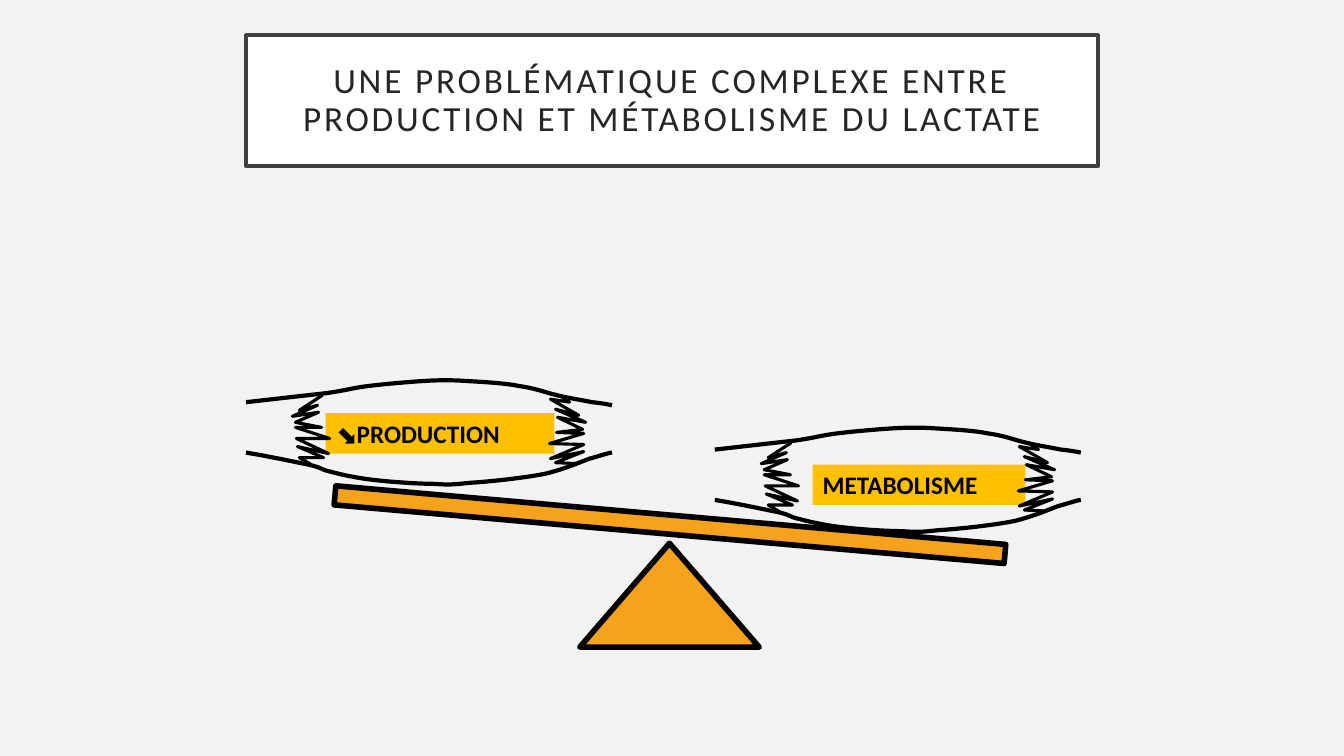
from pptx import Presentation
from pptx.dml.color import RGBColor
from pptx.enum import shapes, text
from pptx.oxml.ns import qn
from pptx.util import Inches, Pt
from lxml import etree

BLACK = RGBColor(0x00, 0x00, 0x00)
WHITE = RGBColor(0xFF, 0xFF, 0xFF)
PAPER = RGBColor(0xF2, 0xF2, 0xF2)
FRAME = RGBColor(0x40, 0x40, 0x40)
TITLE_INK = RGBColor(0x26, 0x26, 0x26)
ORANGE = RGBColor(0xF6, 0xA2, 0x1D)
YELLOW = RGBColor(0xFF, 0xC0, 0x00)

UPPER_WALL = [
    (2.44, 3.99), (2.71, 3.96), (2.97, 3.93), (3.24, 3.9),
    (3.45, 3.87), (3.49, 3.85), (3.65, 3.83),
    (3.81, 3.81), (4.04, 3.79), (4.2, 3.78),
    (4.37, 3.77), (4.47, 3.77), (4.63, 3.78),
    (4.79, 3.79), (5.01, 3.8), (5.15, 3.83),
    (5.3, 3.85), (5.4, 3.89), (5.52, 3.92),
    (5.64, 3.95), (5.78, 3.97), (5.87, 3.99),
    (5.97, 4), (6.02, 4.01), (6.07, 4.02)]
LOWER_WALL = [
    (2.44, 4.49), (2.68, 4.53), (2.91, 4.58), (3.06, 4.61),
    (3.2, 4.64), (3.18, 4.66), (3.28, 4.68),
    (3.39, 4.71), (3.53, 4.74), (3.69, 4.76),
    (3.86, 4.78), (4.13, 4.8), (4.29, 4.8),
    (4.45, 4.81), (4.48, 4.81), (4.66, 4.79),
    (4.85, 4.78), (5.21, 4.74), (5.41, 4.7),
    (5.61, 4.65), (5.74, 4.59), (5.85, 4.55),
    (5.96, 4.52), (6.01, 4.5), (6.07, 4.49)]
LEFT_SPRING = [
    (3.2, 3.92), (2.97, 4.07), (3.15, 4.02), (2.9, 4.13), (3.16, 4.09),
    (2.93, 4.19), (3.19, 4.24), (2.93, 4.24), (3.27, 4.35), (2.94, 4.35),
    (3.26, 4.5), (2.95, 4.43), (3.21, 4.54), (2.97, 4.54), (3.09, 4.61)]
RIGHT_SPRING = [
    (5.55, 3.92), (5.65, 3.99), (5.46, 3.96), (5.74, 4.12), (5.51, 4.06),
    (5.81, 4.19), (5.53, 4.14), (5.78, 4.26), (5.52, 4.29), (5.79, 4.3),
    (5.45, 4.4), (5.79, 4.41), (5.46, 4.55), (5.79, 4.48), (5.51, 4.59),
    (5.73, 4.6)]


def smooth_curve(knots, steps=8):
    points = [knots[0]]
    for i in range(0, len(knots) - 1, 3):
        a, b, c, d = knots[i:i + 4]
        for n in range(1, steps + 1):
            t = n / steps
            v = 1 - t
            points.append(tuple(
                v**3 * a[k] + 3 * v * v * t * b[k] + 3 * v * t * t * c[k] + t**3 * d[k]
                for k in (0, 1)))
    return points


def style(sp, fill, line, width, rounded=True):
    sp.shadow.inherit = False
    if fill is None:
        sp.fill.background()
    else:
        sp.fill.solid()
        sp.fill.fore_color.rgb = fill
    sp.line.color.rgb = line
    sp.line.width = Pt(width)
    if rounded:
        etree.SubElement(sp.line._get_or_add_ln(), qn("a:round"))


prs = Presentation()
prs.slide_width = Inches(13.33)
prs.slide_height = Inches(7.5)
s = prs.slides.add_slide(prs.slide_layouts[6])
s.background.fill.solid()
s.background.fill.fore_color.rgb = PAPER

title = s.shapes.add_shape(shapes.MSO_SHAPE.RECTANGLE,
                           Inches(2.44), Inches(0.35), Inches(8.45), Inches(1.3))
style(title, WHITE, FRAME, 2.5, rounded=False)
tf = title.text_frame
tf.word_wrap = True
tf.vertical_anchor = text.MSO_ANCHOR.MIDDLE
tf.margin_left = tf.margin_right = tf.margin_top = tf.margin_bottom = Inches(0.2)
p = tf.paragraphs[0]
p.alignment = text.PP_ALIGN.CENTER
p.line_spacing = 0.9
r = p.add_run()
r.text = "UNE PROBLÉMATIQUE COMPLEXE ENTRE PRODUCTION ET MÉTABOLISME DU LACTATE"
r.font.name = "Calibri"
r.font.size = Pt(25.2)
r.font.color.rgb = TITLE_INK
r.font._element.set("spc", "200")

pivot = s.shapes.add_shape(shapes.MSO_SHAPE.ISOSCELES_TRIANGLE,
                           Inches(5.75), Inches(5.39), Inches(1.78), Inches(1.03))
style(pivot, ORANGE, BLACK, 4)
beam = s.shapes.add_shape(shapes.MSO_SHAPE.RECTANGLE,
                          Inches(3.31), Inches(5.11), Inches(6.67), Inches(0.19))
beam.rotation = 5
style(beam, ORANGE, BLACK, 4)

for label, x, y, w in [("⬊PRODUCTION", 3.23, 4.1, 2.27),
                       ("METABOLISME", 8.06, 4.61, 2.11)]:
    sp = s.shapes.add_textbox(Inches(x), Inches(y), Inches(w), Inches(0.4))
    sp.fill.solid()
    sp.fill.fore_color.rgb = YELLOW
    tf = sp.text_frame
    tf.word_wrap = False
    tf.auto_size = text.MSO_AUTO_SIZE.SHAPE_TO_FIT_TEXT
    r = tf.paragraphs[0].add_run()
    r.text = label
    r.font.name = "Calibri"
    r.font.size = Pt(18)
    r.font.bold = True
    r.font.color.rgb = BLACK

outlines = [(smooth_curve(UPPER_WALL), 3), (smooth_curve(LOWER_WALL), 3),
            (LEFT_SPRING, 2.25), (RIGHT_SPRING, 2.25)]
for dx, dy in [(0, 0), (4.65, 0.47)]:
    vessel = s.shapes.add_group_shape()
    for points, width in outlines:
        path_points = [(Inches(x + dx), Inches(y + dy)) for x, y in points]
        builder = vessel.shapes.build_freeform(*path_points[0])
        builder.add_line_segments(path_points[1:], close=False)
        style(builder.convert_to_shape(), None, BLACK, width)

prs.save("out.pptx")
